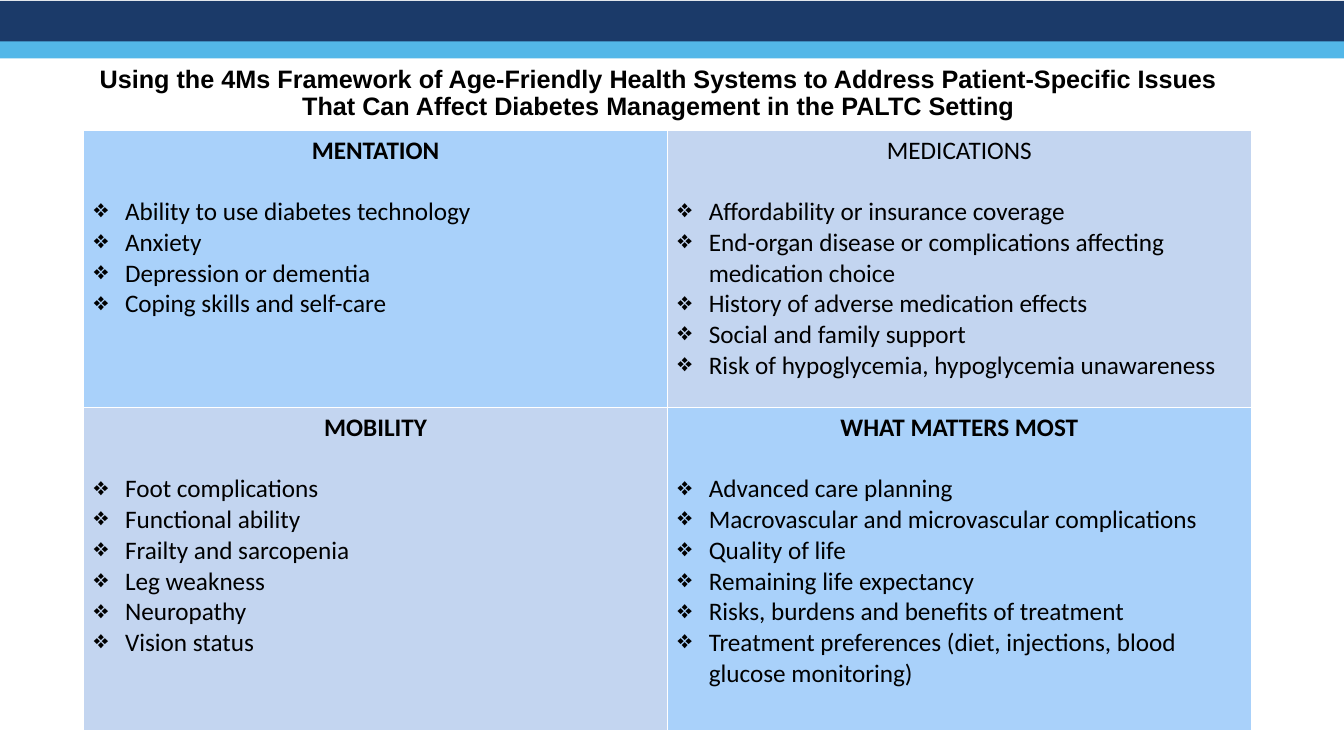
from dataclasses import dataclass

import lxml.etree
import pptx
import pptx.dml.color
import pptx.enum.shapes
import pptx.enum.text
import pptx.oxml.ns
import pptx.util

WIDTH = pptx.util.Inches(13.33)
HEIGHT = pptx.util.Inches(7.5)
COLORS = {
    "navy": "1B3A69",
    "sky": "53B7E8",
    "blue": "A9D1FA",
    "lavender": "C3D5F0",
    "black": "000000",
    "white": "FFFFFF",
}
TITLE = (
    "Using the 4Ms Framework of Age-Friendly Health Systems to Address "
    "Patient-Specific Issues That Can Affect Diabetes Management in the PALTC Setting"
)
ROW_SHARES = (36.67, 42.8)
BULLET_INDENT = pptx.util.Inches(0.31)
BODY_SIZE = pptx.util.Pt(18)


@dataclass(frozen=True)
class Box:
    """A rectangle in percent of the slide's width and height."""

    left: float
    top: float
    width: float
    height: float

    def lengths(self) -> tuple[int, int, int, int]:
        return (
            round(WIDTH * self.left / 100),
            round(HEIGHT * self.top / 100),
            round(WIDTH * self.width / 100),
            round(HEIGHT * self.height / 100),
        )


@dataclass(frozen=True)
class Band:
    box: Box
    color: str


@dataclass(frozen=True)
class Quadrant:
    row: int
    column: int
    color: str
    heading: str
    items: tuple[str, ...]
    bold_heading: bool = True


BANDS = (
    Band(Box(0, 0.13, 100, 5.6), "navy"),
    Band(Box(0, 5.47, 100, 2.27), "sky"),
)
TITLE_BOX = Box(4.8, 5.33, 88.37, 14.27)
TABLE_BOX = Box(6.23, 17.2, 86.87, sum(ROW_SHARES))
QUADRANTS = (
    Quadrant(0, 0, "blue", "MENTATION", (
        "Ability to use diabetes technology",
        "Anxiety",
        "Depression or dementia",
        "Coping skills and self-care",
    )),
    Quadrant(0, 1, "lavender", "MEDICATIONS", (
        "Affordability or insurance coverage",
        "End-organ disease or complications affecting medication choice",
        "History of adverse medication effects",
        "Social and family support",
        "Risk of hypoglycemia, hypoglycemia unawareness",
    ), bold_heading=False),
    Quadrant(1, 0, "lavender", "MOBILITY", (
        "Foot complications",
        "Functional ability",
        "Frailty and sarcopenia",
        "Leg weakness",
        "Neuropathy",
        "Vision status",
    )),
    Quadrant(1, 1, "blue", "WHAT MATTERS MOST", (
        "Advanced care planning",
        "Macrovascular and microvascular complications",
        "Quality of life",
        "Remaining life expectancy",
        "Risks, burdens and benefits of treatment",
        "Treatment preferences (diet, injections, blood glucose monitoring)",
    )),
)


def rgb(name: str) -> pptx.dml.color.RGBColor:
    return pptx.dml.color.RGBColor.from_string(COLORS[name])


def format_font(paragraph, name: str, bold: bool) -> None:
    for attribute, value in {"name": name, "size": BODY_SIZE, "bold": bold}.items():
        setattr(paragraph.font, attribute, value)
    paragraph.font.color.rgb = rgb("black")


def add_band(slide, band: Band) -> None:
    shape = slide.shapes.add_shape(
        pptx.enum.shapes.MSO_SHAPE.RECTANGLE, *band.box.lengths()
    )
    shape.shadow.inherit = False
    shape.fill.solid()
    shape.fill.fore_color.rgb = rgb(band.color)
    shape.line.fill.background()


def fill_title(slide) -> None:
    title = slide.shapes.title
    for attribute, value in zip(
        ("left", "top", "width", "height"), TITLE_BOX.lengths()
    ):
        setattr(title, attribute, value)
    frame = title.text_frame
    frame.text = TITLE
    frame.word_wrap = True
    frame.auto_size = pptx.enum.text.MSO_AUTO_SIZE.NONE
    frame.vertical_anchor = pptx.enum.text.MSO_ANCHOR.MIDDLE
    paragraph = frame.paragraphs[0]
    paragraph.alignment = pptx.enum.text.PP_ALIGN.CENTER
    paragraph.line_spacing = 0.9
    format_font(paragraph, "Arial", True)


def add_bullet(paragraph) -> None:
    properties = paragraph._p.get_or_add_pPr()
    properties.set("marL", str(BULLET_INDENT))
    properties.set("indent", str(-BULLET_INDENT))
    bullet = lxml.etree.SubElement(properties, pptx.oxml.ns.qn("a:buChar"))
    bullet.set("char", "❖")


def add_borders(cell) -> None:
    properties = cell._tc.get_or_add_tcPr()
    for side in ("a:lnL", "a:lnR", "a:lnT", "a:lnB"):
        line = lxml.etree.SubElement(properties, pptx.oxml.ns.qn(side))
        line.set("w", str(pptx.util.Pt(1)))
        fill = lxml.etree.SubElement(line, pptx.oxml.ns.qn("a:solidFill"))
        color = lxml.etree.SubElement(fill, pptx.oxml.ns.qn("a:srgbClr"))
        color.set("val", COLORS["white"])


def fill_quadrant(table, quadrant: Quadrant) -> None:
    cell = table.cell(quadrant.row, quadrant.column)
    add_borders(cell)
    cell.fill.solid()
    cell.fill.fore_color.rgb = rgb(quadrant.color)
    heading = cell.text_frame.paragraphs[0]
    heading.text = quadrant.heading
    heading.alignment = pptx.enum.text.PP_ALIGN.CENTER
    heading.space_after = pptx.util.Pt(22)
    format_font(heading, "Calibri", quadrant.bold_heading)
    for item in quadrant.items:
        paragraph = cell.text_frame.add_paragraph()
        paragraph.text = item
        add_bullet(paragraph)
        format_font(paragraph, "Calibri", False)


def add_quadrant_table(slide) -> None:
    table = slide.shapes.add_table(2, 2, *TABLE_BOX.lengths()).table
    table.first_row = False
    table.horz_banding = False
    for row, share in zip(table.rows, ROW_SHARES):
        row.height = round(HEIGHT * share / 100)
    for quadrant in QUADRANTS:
        fill_quadrant(table, quadrant)


def main() -> None:
    presentation = pptx.Presentation()
    presentation.slide_width = WIDTH
    presentation.slide_height = HEIGHT
    slide = presentation.slides.add_slide(
        presentation.slide_layouts.get_by_name("Title Only")
    )
    for band in BANDS:
        add_band(slide, band)
    fill_title(slide)
    add_quadrant_table(slide)
    presentation.save("out.pptx")


if __name__ == "__main__":
    main()
